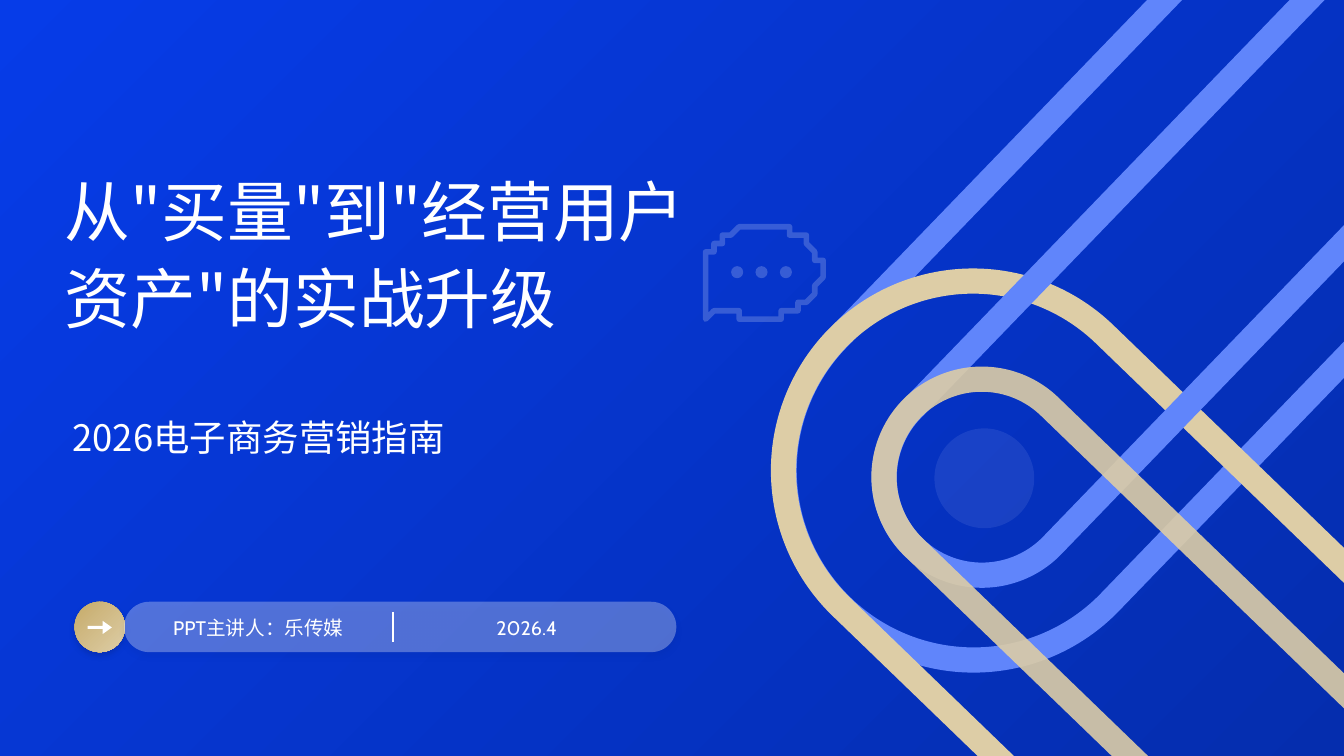
from dataclasses import dataclass
from math import cos, radians, sin
from typing import NamedTuple

from lxml import etree
from pptx import Presentation, util as u
from pptx.dml.color import RGBColor
from pptx.enum import shapes, text
from pptx.oxml import ns

COLS, ROWS = 160, 90
CELL = u.Inches(1 / 12)
KIND = shapes.MSO_SHAPE


@dataclass(frozen=True)
class Theme:
    white: str = "FFFFFF"
    sky: str = "6085FB"
    pale: str = "CAD6FE"
    gold: str = "DDCDA6"
    dark_gold: str = "C6AB6A"
    blue: str = "063CE8"
    navy: str = "052DAE"
    shadow: str = "031E74"
    cjk: str = "Noto Sans CJK SC"
    latin: str = "Cabin"
    title: float = 47
    subtitle: float = 26
    label: float = 14
    ribbon: float = 18
    bubble: float = 4


class Box(NamedTuple):
    """A place on the grid, in columns and rows."""
    left: float
    top: float
    width: float
    height: float


class Ribbon(NamedTuple):
    box: Box
    angle: float
    color: str
    opacity: int = 100


class Label(NamedTuple):
    words: str
    box: Box
    size: float
    font: str
    align: text.PP_ALIGN = text.PP_ALIGN.LEFT
    anchor: text.MSO_ANCHOR = text.MSO_ANCHOR.MIDDLE


T = Theme()
RIBBONS = [
    Ribbon(Box(117.48, -26.28, 45.12, 114.6), 224, T.sky),
    Ribbon(Box(110.76, 26.04, 45.12, 93.72), 314, T.gold),
    Ribbon(Box(126.48, -7.32, 23.28, 84.36), 224, T.sky),
    Ribbon(Box(121.68, 38.16, 23.28, 69), 314, T.gold, 90),
]
TITLE = Label('从"买量"到"经营用户资产"的实战升级',
              Box(7.68, 12.12, 77.28, 35.28), T.title, T.cjk)
LABELS = [
    Label("PPT主讲人：乐传媒", Box(18.36, 72.6, 24.84, 4.08), T.label, T.latin,
          text.PP_ALIGN.CENTER),
    Label("2026.4", Box(50.28, 72.6, 24.84, 4.08), T.label, T.latin,
          text.PP_ALIGN.CENTER),
    Label("2026电子商务营销指南", Box(8.64, 48.84, 75.36, 10.2), T.subtitle, T.cjk,
          anchor=text.MSO_ANCHOR.TOP),
]
BUBBLE_X, BUBBLE_Y = 90.66, 32.4
BUBBLE_RX, BUBBLE_RY = 7.02, 5.5
BUBBLE_TAIL = [(86.2, 36.75), (85.5, 36.8), (84.7, 37.2), (83.75, 37.75),
               (84.2, 36.4), (84.4, 35.4), (84.3, 34.8)]


def cells(n: float) -> int:
    return round(n * CELL)


def rgb(color: str) -> RGBColor:
    return RGBColor.from_string(color)


def set_opacity(parent, percent: int) -> None:
    """Make every colour below an XML element translucent."""
    for color in parent.iter(ns.qn("a:srgbClr")):
        etree.SubElement(color, ns.qn("a:alpha"), val=str(percent * 1000))


def add_shape(s, kind, box: Box, fill: str = "", opacity: int = 100):
    sp = s.shapes.add_shape(kind, *map(cells, box))
    sp.shadow.inherit = False
    sp.line.fill.background()
    if fill:
        sp.fill.solid()
        sp.fill.fore_color.rgb = rgb(fill)
    else:
        sp.fill.background()
    if opacity < 100:
        set_opacity(sp.element.spPr, opacity)
    return sp


def set_gradient(sp, start: str, end: str) -> None:
    """Blend two colours from the top left to the bottom right."""
    sp.fill.gradient()
    sp.fill.gradient_angle = 315
    for stop, color, position in zip(sp.fill.gradient_stops, (start, end), (0, 1)):
        stop.color.rgb = rgb(color)
        stop.position = position


def add_drop_shadow(sp) -> None:
    effects = sp.element.spPr.find(ns.qn("a:effectLst"))
    shadow = etree.SubElement(effects, ns.qn("a:outerShdw"), blurRad=str(u.Pt(4)),
                              dist=str(u.Pt(3)), dir="5400000", algn="t",
                              rotWithShape="0")
    etree.SubElement(shadow, ns.qn("a:srgbClr"), val=T.shadow)
    set_opacity(shadow, 25)


def add_ribbon(s, ribbon: Ribbon) -> None:
    sp = add_shape(s, KIND.ROUND_2_SAME_RECTANGLE, ribbon.box)
    sp.adjustments[0], sp.adjustments[1] = 0.5, 0
    sp.rotation = ribbon.angle
    sp.line.color.rgb = rgb(ribbon.color)
    sp.line.width = u.Pt(T.ribbon)
    if ribbon.opacity < 100:
        set_opacity(sp.element.spPr, ribbon.opacity)


def write_label(sp, label: Label) -> None:
    sp.left, sp.top, sp.width, sp.height = map(cells, label.box)
    tf = sp.text_frame
    tf.word_wrap = True
    tf.auto_size = text.MSO_AUTO_SIZE.NONE
    tf.vertical_anchor = label.anchor
    tf.margin_left = tf.margin_top = tf.margin_right = tf.margin_bottom = 0
    p = tf.paragraphs[0]
    p.alignment = label.align
    p.line_spacing = 1.1
    r = p.add_run()
    r.text = label.words
    r.font.size = u.Pt(label.size)
    r.font.name = label.font
    r.font.color.rgb = rgb(T.white)
    latin = r.font._element.find(ns.qn("a:latin"))
    latin.addnext(latin.makeelement(ns.qn("a:ea"), {"typeface": label.font}))


def add_bubble(s) -> None:
    """Draw a speech bubble: an open ellipse closed by a tail, with three dots."""
    arc = [(BUBBLE_X + BUBBLE_RX * cos(radians(a)), BUBBLE_Y + BUBBLE_RY * sin(radians(a)))
           for a in range(164, 483, 3)]
    outline = s.shapes.build_freeform(*arc[0], scale=CELL)
    outline.add_line_segments(arc[1:] + BUBBLE_TAIL, close=True)
    sp = outline.convert_to_shape()
    sp.shadow.inherit = False
    sp.fill.background()
    sp.line.color.rgb = rgb(T.white)
    sp.line.width = u.Pt(T.bubble)
    set_opacity(sp.element.spPr, 20)
    etree.SubElement(sp.line._ln, ns.qn("a:round"))
    size = 1.44
    for step in (-1, 0, 1):
        add_shape(s, KIND.OVAL, Box(BUBBLE_X + step * 2.9 - size / 2,
                                    BUBBLE_Y - size / 2, size, size), T.white, 20)


def add_presenter_bar(s) -> None:
    badge = add_shape(s, KIND.OVAL, Box(8.88, 71.64, 6, 6))
    set_gradient(badge, T.dark_gold, T.gold)
    add_drop_shadow(badge)
    arrow = add_shape(s, KIND.RIGHT_ARROW, Box(10.44, 73.92, 2.88, 1.56), T.white)
    arrow.adjustments[0], arrow.adjustments[1] = 0.24, 0.7
    pill = add_shape(s, KIND.ROUNDED_RECTANGLE, Box(14.76, 71.64, 65.76, 6), T.white, 30)
    pill.adjustments[0] = 0.5
    add_drop_shadow(pill)
    divider = s.shapes.add_connector(shapes.MSO_CONNECTOR.STRAIGHT,
                                     *map(cells, (46.8, 72.84, 46.8, 76.44)))
    divider.line.color.rgb = rgb(T.white)
    divider.line.width = u.Pt(1)
    etree.SubElement(divider.element.spPr, ns.qn("a:effectLst"))


def main() -> None:
    prs = Presentation()
    prs.slide_width, prs.slide_height = cells(COLS), cells(ROWS)
    s = prs.slides.add_slide(prs.slide_layouts[5])
    backdrop = add_shape(s, KIND.RECTANGLE, Box(0, 0, COLS, ROWS))
    set_gradient(backdrop, T.blue, T.navy)
    for ribbon in RIBBONS:
        add_ribbon(s, ribbon)
    add_shape(s, KIND.OVAL, Box(111.24, 51, 11.88, 11.88), T.pale, 10)
    add_presenter_bar(s)
    add_bubble(s)
    title = s.shapes.title
    title.element.getparent().append(title.element)
    write_label(title, TITLE)
    for label in LABELS:
        write_label(s.shapes.add_textbox(*map(cells, label.box)), label)
    prs.save("out.pptx")


if __name__ == "__main__":
    main()
